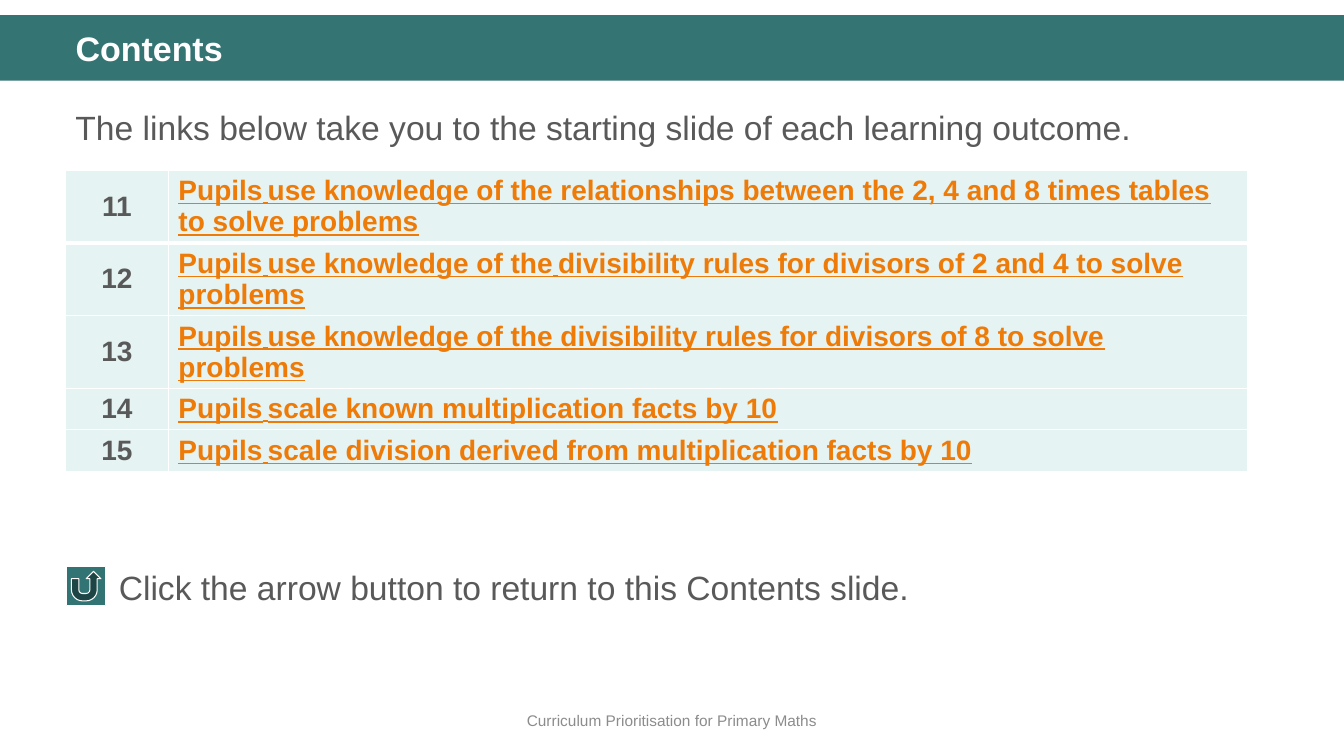
"""Build the Contents slide of a primary maths deck."""
from dataclasses import dataclass
from typing import Any

from lxml.etree import SubElement
from pptx import Presentation
from pptx.dml.color import RGBColor
from pptx.enum.shapes import MSO_SHAPE
from pptx.enum.text import MSO_ANCHOR, MSO_AUTO_SIZE, PP_ALIGN
from pptx.oxml.ns import qn
from pptx.util import Inches, Pt

WIDTH, HEIGHT = Inches(13.33), Inches(7.5)
COLOURS = {
    "band": "347574", "button": "327473", "cell": "E5F3F2", "white": "FFFFFF",
    "body": "595959", "footer": "8C8C8C", "link": "EE7B08",
}
HEADING = {"name": "Arial", "size": Pt(24.3), "bold": True}
BODY = {"name": "Arial", "size": Pt(24), "bold": False}
FOOTER = {"name": "Arial", "size": Pt(11), "bold": False}
NUMBER = {"name": "Arial", "size": Pt(20), "bold": True}
LINK = NUMBER | {"underline": True}
GAP = {"name": "Calibri", "size": Pt(16), "bold": False, "underline": True}


@dataclass(frozen=True)
class Area:
    """Position and size as percentages of the slide."""
    left: float
    top: float
    width: float
    height: float

    def lengths(self) -> tuple[int, int, int, int]:
        """Return the area as slide lengths."""
        return (across(self.left), down(self.top), across(self.width), down(self.height))


@dataclass(frozen=True)
class Label:
    """A text box with one line of text."""
    area: Area
    text: str
    style: dict[str, Any]
    colour: str
    paragraph: dict[str, Any]
    anchor: MSO_ANCHOR = MSO_ANCHOR.TOP


@dataclass(frozen=True)
class Block:
    """A filled preset shape."""
    area: Area
    preset: MSO_SHAPE
    colour: str
    outlined: bool = False


@dataclass(frozen=True)
class Outcome:
    """A table row whose link phrases are joined by narrow gaps."""
    number: int
    phrases: tuple[str, ...]
    height: float


BLOCKS = (
    Block(Area(0, 2, 100, 8.67), MSO_SHAPE.RECTANGLE, "band"),
    Block(Area(4.95, 74.93, 2.93, 5.2), MSO_SHAPE.ACTION_BUTTON_RETURN, "button", True),
)
TITLE = Label(Area(4.88, 3.6, 91.37, 6.27), "Contents", HEADING, "white",
              {"alignment": PP_ALIGN.LEFT, "line_spacing": 0.9, "space_before": Pt(0)})
LABELS = (
    Label(Area(0, 92.67, 100, 5.33), "Curriculum Prioritisation for Primary Maths",
          FOOTER, "footer", {"alignment": PP_ALIGN.CENTER}, MSO_ANCHOR.MIDDLE),
    Label(Area(4.88, 12.4, 91.37, 46.8),
          "The links below take you to the starting slide of each learning outcome.",
          BODY, "body", {"line_spacing": 1.2}),
    Label(Area(8.1, 74.27, 84.92, 6.67),
          "Click the arrow button to return to this Contents slide.", BODY, "body", {}),
)
ONE_LINE, TWO_LINES = 5.47, 9.6
OUTCOMES = (
    Outcome(11, ("Pupils", "use knowledge of the relationships between the 2, 4 and 8 "
                 "times tables to solve problems"), TWO_LINES),
    Outcome(12, ("Pupils", "use knowledge of the", "divisibility rules for divisors of "
                 "2 and 4 to solve problems"), TWO_LINES),
    Outcome(13, ("Pupils", "use knowledge of the divisibility rules for divisors of 8 "
                 "to solve problems"), TWO_LINES),
    Outcome(14, ("Pupils", "scale known multiplication facts by 10"), ONE_LINE),
    Outcome(15, ("Pupils", "scale division derived from multiplication facts by 10"), ONE_LINE),
)
COLUMNS = (7.65, 80.27)
TABLE = Area(4.88, 22.5, sum(COLUMNS), sum(outcome.height for outcome in OUTCOMES))


def across(share: float) -> int:
    """Turn a percentage of the slide width into a length."""
    return round(WIDTH * share / 100)


def down(share: float) -> int:
    """Turn a percentage of the slide height into a length."""
    return round(HEIGHT * share / 100)


def apply(target: Any, values: dict[str, Any]) -> None:
    """Set every named attribute on the target."""
    for name, value in values.items():
        setattr(target, name, value)


def colour_of(name: str) -> RGBColor:
    """Look up a named colour."""
    return RGBColor.from_string(COLOURS[name])


def add_span(para: Any, text: str, style: dict[str, Any], colour: str) -> None:
    """Append a formatted run."""
    span = para.add_run()
    span.text = text
    apply(span.font, style)
    span.font.color.rgb = colour_of(colour)


def write_label(box: Any, label: Label) -> None:
    """Place a text shape and fill it with its label."""
    apply(box, dict(zip(("left", "top", "width", "height"), label.area.lengths())))
    apply(box.text_frame, {"word_wrap": True, "auto_size": MSO_AUTO_SIZE.NONE,
                           "vertical_anchor": label.anchor})
    para = box.text_frame.paragraphs[0]
    apply(para, label.paragraph)
    add_span(para, label.text, label.style, label.colour)


def add_block(page: Any, block: Block) -> None:
    """Draw a filled shape."""
    shape = page.shapes.add_shape(block.preset, *block.area.lengths())
    shape.shadow.inherit = False
    shape.fill.solid()
    shape.fill.fore_color.rgb = colour_of(block.colour)
    if block.outlined:
        shape.line.color.rgb = colour_of("white")
        shape.line.width = Pt(0.75)
    else:
        shape.line.fill.background()


def style_cell(cell: Any, top: float, bottom: float) -> None:
    """Give a cell white borders and a pale fill."""
    properties = cell._tc.get_or_add_tcPr()
    for side, points in {"L": 1, "R": 1, "T": top, "B": bottom}.items():
        border = SubElement(properties, qn(f"a:ln{side}"), w=str(Pt(points)))
        fill = SubElement(border, qn("a:solidFill"))
        SubElement(fill, qn("a:srgbClr"), val=COLOURS["white"])
    cell.fill.solid()
    cell.fill.fore_color.rgb = colour_of("cell")
    cell.vertical_anchor = MSO_ANCHOR.MIDDLE


def add_outcomes(page: Any) -> None:
    """Draw the table of learning outcomes."""
    table = page.shapes.add_table(len(OUTCOMES), len(COLUMNS), *TABLE.lengths()).table
    apply(table, {"first_row": False, "horz_banding": False})
    for column, share in zip(table.columns, COLUMNS):
        column.width = across(share)
    for index, (row, outcome) in enumerate(zip(table.rows, OUTCOMES)):
        row.height = down(outcome.height)
        for cell in row.cells:
            style_cell(cell, 3 if index == 1 else 1, 3 if index == 0 else 1)
        number, link = (cell.text_frame.paragraphs[0] for cell in row.cells)
        number.alignment = PP_ALIGN.CENTER
        add_span(number, str(outcome.number), NUMBER, "body")
        for position, phrase in enumerate(outcome.phrases):
            if position:
                add_span(link, " ", GAP, "link")
            add_span(link, phrase, LINK, "link")


def main() -> None:
    """Build and save the deck."""
    deck = Presentation()
    apply(deck, {"slide_width": WIDTH, "slide_height": HEIGHT})
    page = deck.slides.add_slide(deck.slide_layouts[5])
    for block in BLOCKS:
        add_block(page, block)
    for label in LABELS:
        write_label(page.shapes.add_textbox(*label.area.lengths()), label)
    add_outcomes(page)
    title = page.shapes.title
    write_label(title, TITLE)
    title.element.getparent().append(title.element)
    deck.save("out.pptx")


if __name__ == "__main__":
    main()
